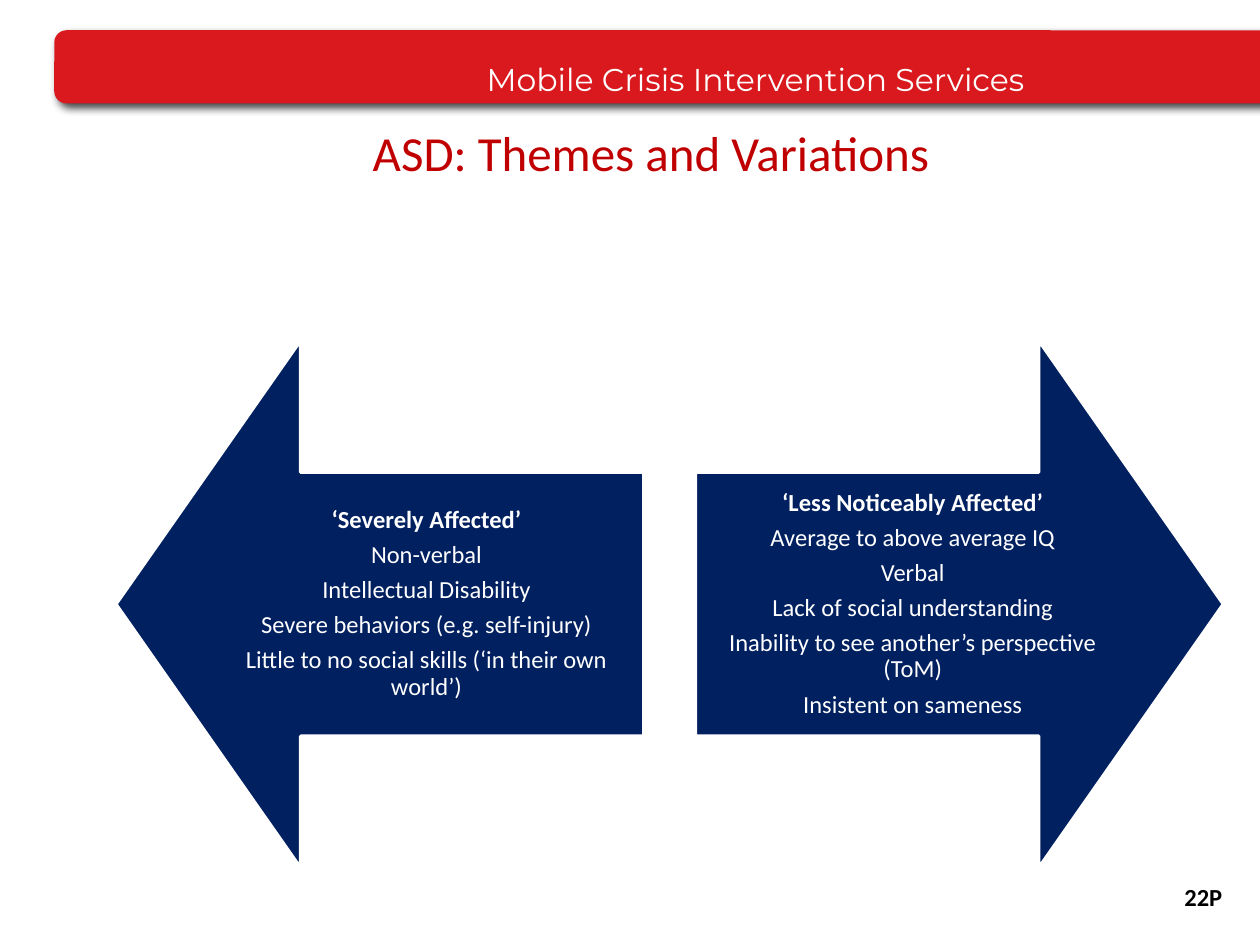
from dataclasses import dataclass

from lxml.etree import SubElement
from pptx import Presentation
from pptx.dml.color import RGBColor as RGB
from pptx.enum.shapes import MSO_SHAPE as Shape
from pptx.enum.text import MSO_ANCHOR as Anchor, PP_ALIGN as Align
from pptx.oxml.ns import qn
from pptx.util import Pt


@dataclass(frozen=True)
class Theme:
    banner: RGB = RGB(0xD9, 0x19, 0x1D)
    heading: RGB = RGB(0xC0, 0x00, 0x00)
    navy: RGB = RGB(0x00, 0x20, 0x60)
    white: RGB = RGB(0xFF, 0xFF, 0xFF)
    black: RGB = RGB(0x00, 0x00, 0x00)
    body_font: str = "Calibri"
    banner_font: str = "Montserrat"
    title_size: int = 28
    banner_size: int = 18
    body_size: int = 14


class SlideBuilder:
    def __init__(self, slide, theme):
        self.slide = slide
        self.theme = theme

    def add_text(self, paragraph, text, size, color, font=None, bold=False, align=Align.CENTER):
        paragraph.alignment = align
        run = paragraph.add_run()
        run.text = text
        run.font.name = font or self.theme.body_font
        run.font.size = Pt(size)
        run.font.bold = bold
        run.font.color.rgb = color

    def frame(self, shape, anchor, insets):
        frame = shape.text_frame
        frame.word_wrap = True
        frame.vertical_anchor = anchor
        (frame.margin_left, frame.margin_top,
         frame.margin_right, frame.margin_bottom) = map(Pt, insets)
        return frame

    def shape(self, kind, box, fill):
        shape = self.slide.shapes.add_shape(kind, *map(Pt, box))
        shape.shadow.inherit = False
        shape.fill.solid()
        shape.fill.fore_color.rgb = fill
        return shape

    def text_box(self, box, anchor, insets):
        return self.frame(self.slide.shapes.add_textbox(*map(Pt, box)), anchor, insets)

    def banner(self, text, box, indent):
        theme = self.theme
        banner = self.shape(Shape.ROUNDED_RECTANGLE, box, theme.banner)
        banner.line.fill.background()
        effects = banner._element.spPr.find(qn("a:effectLst"))
        shadow = SubElement(effects, qn("a:outerShdw"), blurRad=str(Pt(5)),
                            dist=str(Pt(3)), dir=str(45 * 60000), rotWithShape="0")
        color = SubElement(shadow, qn("a:srgbClr"), val=str(theme.black))
        SubElement(color, qn("a:alpha"), val="75000")
        frame = self.frame(banner, Anchor.BOTTOM, (indent, 0, 0, 1))
        frame.paragraphs[0].line_spacing = 0.9
        self.add_text(frame.paragraphs[0], text, theme.banner_size, theme.white,
                      theme.banner_font, align=Align.LEFT)

    def title(self, text, box):
        title = self.slide.shapes.title
        title.left, title.top, title.width, title.height = map(Pt, box)
        frame = self.frame(title, Anchor.TOP, (7.2, 3.6, 7.2, 3.6))
        self.add_text(frame.paragraphs[0], text, self.theme.title_size, self.theme.heading)

    def arrow(self, box, rotation):
        arrow = self.shape(Shape.UP_ARROW, box, self.theme.navy)
        arrow.adjustments[0], arrow.adjustments[1] = 0.5, 0.35
        arrow.rotation = rotation
        arrow.line.color.rgb = self.theme.white
        arrow.line.width = Pt(2)

    def traits(self, lines, box):
        theme = self.theme
        frame = self.text_box(box, Anchor.MIDDLE, (8,) * 4)
        for index, line in enumerate(lines):
            paragraph = frame.add_paragraph() if index else frame.paragraphs[0]
            paragraph.line_spacing = 0.9
            paragraph.space_after = Pt(0.35 * theme.body_size)
            self.add_text(paragraph, line, theme.body_size, theme.white, bold=index == 0)

    def page_label(self, text, box):
        frame = self.text_box(box, Anchor.MIDDLE, (7.2, 3.6, 7.2, 3.6))
        self.add_text(frame.paragraphs[0], text, self.theme.body_size, self.theme.black,
                      bold=True, align=Align.RIGHT)


SEVERE = [
    "‘Severely Affected’",
    "Non-verbal",
    "Intellectual Disability",
    "Severe behaviors (e.g. self-injury)",
    "Little to no social skills (‘in their own world’)",
]
LESS_NOTICEABLE = [
    "‘Less Noticeably Affected’",
    "Average to above average IQ",
    "Verbal",
    "Lack of social understanding",
    "Inability to see another’s perspective (ToM)",
    "Insistent on sameness",
]


def main():
    deck = Presentation()
    deck.slide_width, deck.slide_height = Pt(720), Pt(540)
    title_only = deck.slide_layouts[5]
    page = SlideBuilder(deck.slides.add_slide(title_only), Theme())

    # Header
    page.banner("Mobile Crisis Intervention Services", (31, 17.3, 707, 41.8), indent=245)
    page.title("ASD: Themes and Variations", (59.8, 66.2, 624.2, 90))

    # Opposing arrows; each text area spans the shaft and part of the head
    side, top = 301.7, 194.4
    text_width, text_height = 248.4, side / 2
    text_top = top + (side - text_height) / 2
    for lines, left, rotation, text_offset in (
        (SEVERE, 66.2, 270, side - text_width),
        (LESS_NOTICEABLE, 397.4, 90, 0),
    ):
        page.arrow((left, top, side, side), rotation)
        page.traits(lines, (left + text_offset, text_top, text_width, text_height))

    # Page label
    page.page_label("22P", (381.6, 498.2, 324, 28.8))
    deck.save("out.pptx")


if __name__ == "__main__":
    main()
